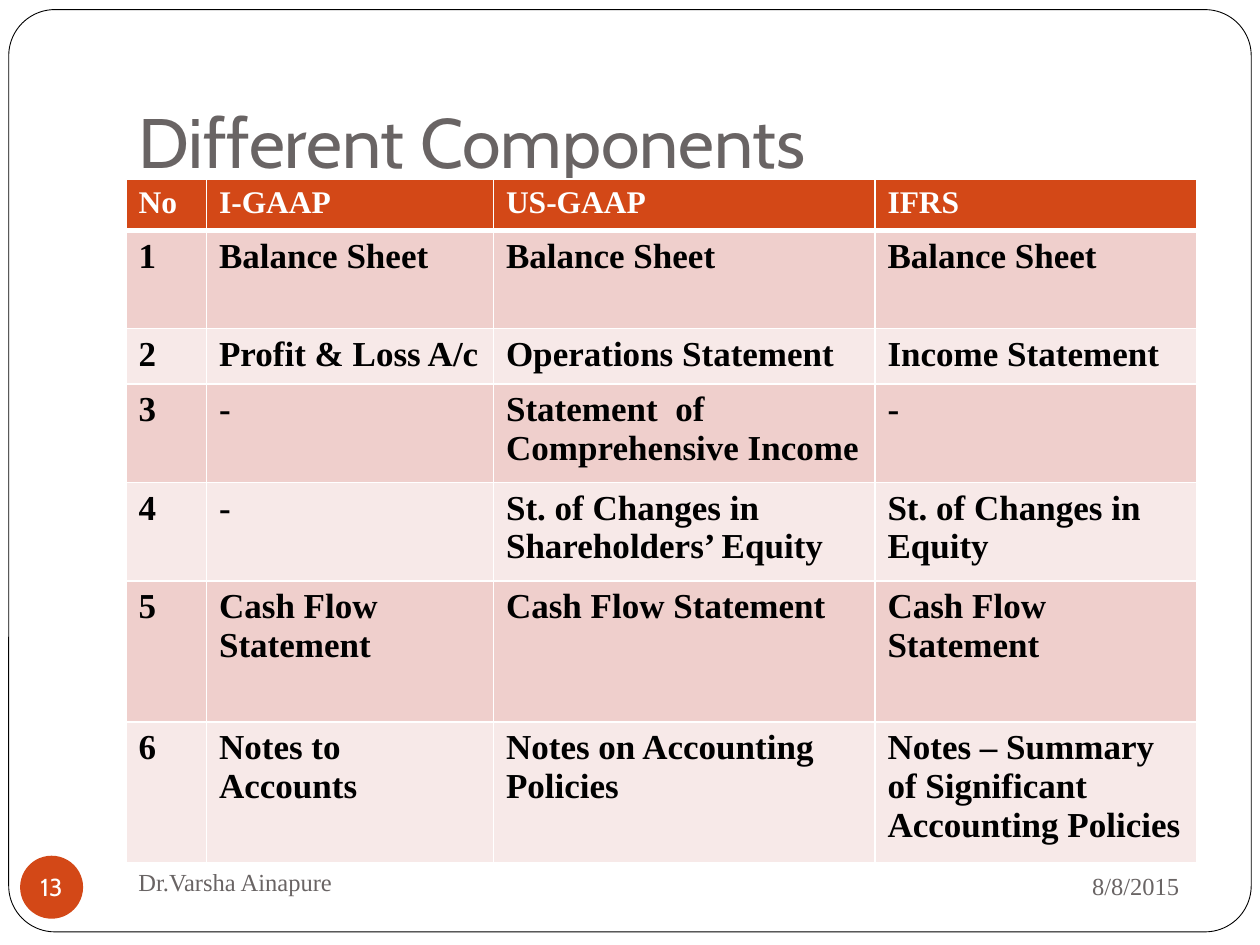
from dataclasses import dataclass

from lxml.etree import SubElement
from pptx import Presentation
from pptx.dml.color import RGBColor
from pptx.enum.shapes import MSO_SHAPE as Preset
from pptx.enum.text import MSO_ANCHOR as Anchor, PP_ALIGN as Align
from pptx.oxml.ns import qn
from pptx.slide import Slide
from pptx.table import _Cell as Cell
from pptx.text.text import TextFrame
from pptx.util import Pt

BLACK = RGBColor(0x00, 0x00, 0x00)
WHITE = RGBColor(0xFF, 0xFF, 0xFF)
GREY = RGBColor(0x69, 0x64, 0x64)
ORANGE = RGBColor(0xD3, 0x48, 0x17)
ROSE = RGBColor(0xEF, 0xCF, 0xCC)
PALE_ROSE = RGBColor(0xF7, 0xE9, 0xE8)

SANS = "Cabin"
SERIF = "Times New Roman"

COLUMN_WIDTHS = (46, 164, 218, 184)
ROW_HEIGHTS = (29.5, 56.2, 31.7, 56.2, 56.2, 80.6, 80.6)
HEADINGS = ("No", "I-GAAP", "US-GAAP", "IFRS")
COMPONENTS = (
    ("Balance Sheet", "Balance Sheet", "Balance Sheet"),
    ("Profit & Loss A/c", "Operations Statement", "Income Statement"),
    ("-", "Statement  of Comprehensive Income", "-"),
    ("-", "St. of Changes in Shareholders’ Equity", "St. of Changes in Equity"),
    ("Cash Flow Statement", "Cash Flow Statement", "Cash Flow Statement"),
    ("Notes to Accounts", "Notes on Accounting Policies",
     "Notes – Summary of Significant Accounting Policies"),
)


@dataclass(frozen=True)
class Style:
    size: float
    font: str
    color: RGBColor
    bold: bool = False
    align: Align = Align.LEFT


@dataclass(frozen=True)
class Label:
    text: str
    left: float
    top: float
    width: float
    height: float
    style: Style
    anchor: Anchor = Anchor.MIDDLE
    bottom_inset: float = 3.6


LABELS = (
    Label("Different Components", 72, 21.6, 612, 90,
          Style(40, SANS, GREY), Anchor.BOTTOM, 7.2),
    Label("8/8/2015", 486, 487.5, 195, 37.5,
          Style(14, SERIF, GREY, align=Align.RIGHT)),
    Label("Dr.Varsha Ainapure", 72, 486, 312, 36, Style(14, SERIF, GREY)),
)


def write(frame: TextFrame, text: str, style: Style) -> None:
    frame.text = text
    paragraph = frame.paragraphs[0]
    paragraph.alignment = style.align
    font = paragraph.runs[0].font
    font.size = Pt(style.size)
    font.name = style.font
    font.bold = style.bold
    font.color.rgb = style.color


def add_label(slide: Slide, label: Label) -> None:
    frame = slide.shapes.add_textbox(
        Pt(label.left), Pt(label.top), Pt(label.width), Pt(label.height)).text_frame
    frame.word_wrap = True
    frame.vertical_anchor = label.anchor
    frame.margin_bottom = Pt(label.bottom_inset)
    write(frame, label.text, label.style)


def add_page_frame(slide: Slide) -> None:
    page_frame = slide.shapes.add_shape(
        Preset.ROUNDED_RECTANGLE, Pt(5), Pt(5.5), Pt(710), Pt(527))
    page_frame.adjustments[0] = 0.05
    page_frame.shadow.inherit = False
    page_frame.fill.solid()
    page_frame.fill.fore_color.rgb = WHITE
    page_frame.line.color.rgb = BLACK
    page_frame.line.width = Pt(0.5)


def add_page_number(slide: Slide, number: int) -> None:
    badge = slide.shapes.add_shape(Preset.OVAL, Pt(11.5), Pt(489), Pt(36), Pt(36))
    badge.shadow.inherit = False
    badge.fill.solid()
    badge.fill.fore_color.rgb = ORANGE
    badge.line.fill.background()
    frame = badge.text_frame
    frame.word_wrap = False
    frame.vertical_anchor = Anchor.MIDDLE
    frame.margin_left = frame.margin_right = 0
    frame.margin_top = frame.margin_bottom = 0
    write(frame, str(number), Style(14, SANS, WHITE, align=Align.CENTER))


def add_borders(cell: Cell, top: float, bottom: float) -> None:
    """Give the cell white borders; the sides are 1 pt. Call before filling."""
    properties = cell._tc.get_or_add_tcPr()
    for side, width in (("lnL", 1), ("lnR", 1), ("lnT", top), ("lnB", bottom)):
        border = SubElement(properties, qn(f"a:{side}"), w=str(Pt(width)))
        fill = SubElement(border, qn("a:solidFill"))
        SubElement(fill, qn("a:srgbClr"), val=str(WHITE))


def add_components_table(slide: Slide) -> None:
    rows = [HEADINGS] + [(str(number), *names)
                         for number, names in enumerate(COMPONENTS, start=1)]
    table = slide.shapes.add_table(
        len(rows), len(HEADINGS), Pt(72), Pt(102.2),
        Pt(sum(COLUMN_WIDTHS)), Pt(sum(ROW_HEIGHTS))).table
    for column, width in zip(table.columns, COLUMN_WIDTHS):
        column.width = Pt(width)
    heading_style = Style(18, SERIF, WHITE, bold=True)
    body_style = Style(20, SERIF, BLACK, bold=True)
    for index, (texts, height) in enumerate(zip(rows, ROW_HEIGHTS)):
        table.rows[index].height = Pt(height)
        is_heading = index == 0
        band = ORANGE if is_heading else ROSE if index % 2 else PALE_ROSE
        for cell, text in zip(table.rows[index].cells, texts):
            add_borders(cell, top=3 if index == 1 else 1,
                        bottom=3 if is_heading else 1)
            cell.fill.solid()
            cell.fill.fore_color.rgb = band
            write(cell.text_frame, text,
                  heading_style if is_heading else body_style)


def main() -> None:
    presentation = Presentation()
    presentation.slide_width = Pt(720)
    presentation.slide_height = Pt(540)
    slide = presentation.slides.add_slide(presentation.slide_layouts[6])
    add_page_frame(slide)
    for label in LABELS:
        add_label(slide, label)
    add_page_number(slide, 13)
    add_components_table(slide)
    presentation.save("out.pptx")


if __name__ == "__main__":
    main()
